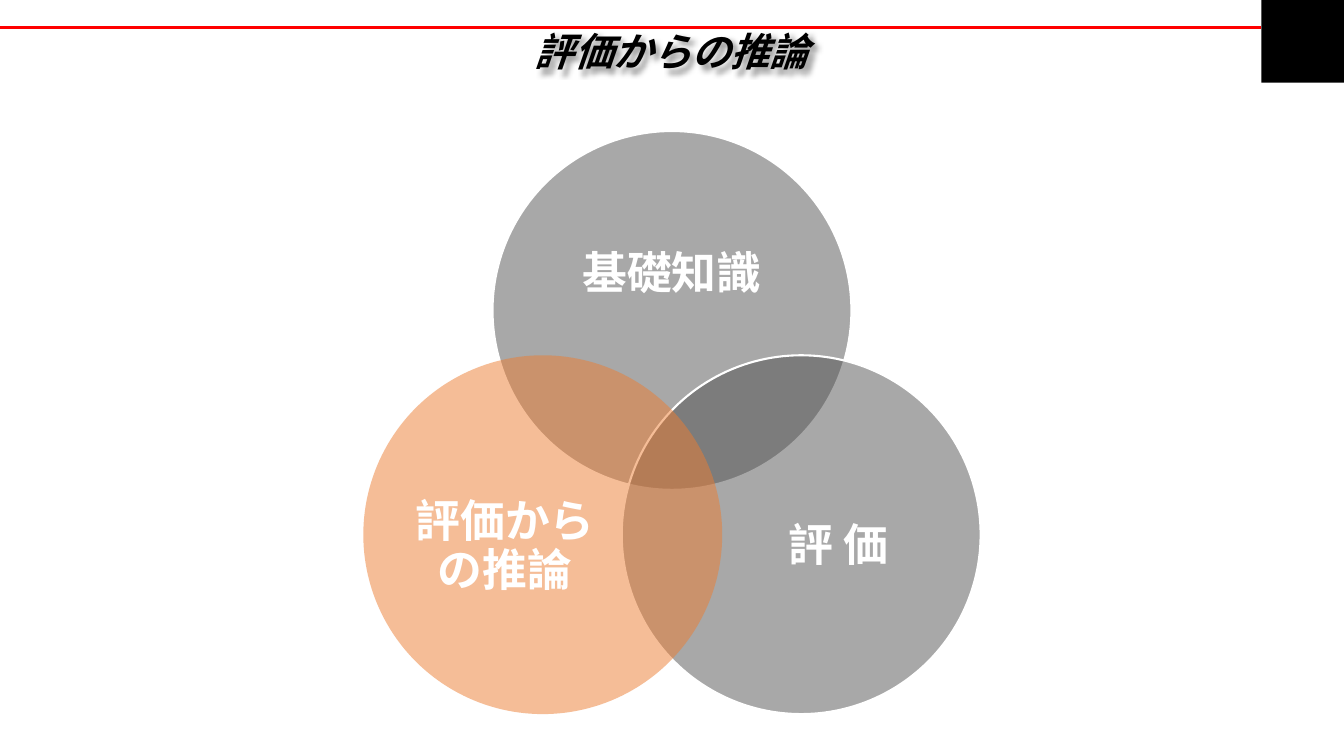
from dataclasses import dataclass

import pptx
import pptx.dml.color
import pptx.enum.shapes
import pptx.enum.text
import pptx.oxml
import pptx.oxml.ns
import pptx.shapes.autoshape
import pptx.slide
import pptx.util

Inches = pptx.util.Inches
Shape = pptx.shapes.autoshape.Shape
Slide = pptx.slide.Slide

WIDTH, HEIGHT = 13.33, 7.5
DIAMETER = 3.56
CENTRE_X, TOP_CENTRE_Y = WIDTH / 2, 3.08
BADGE_SIDE = 0.82
RULE_Y = 0.27


@dataclass(frozen=True)
class Theme:
    font: str = "Noto Sans CJK JP"
    ink: str = "000000"
    white: str = "FFFFFF"
    red: str = "FF0000"
    grey: str = "525252"
    orange: str = "ED7D31"
    title_size: float = 28
    label_size: float = 32
    rule_width: float = 2.25
    outline_width: float = 1.5


THEME = Theme()


@dataclass(frozen=True)
class Circle:
    """Offsets and label sizes are shares of the diameter."""
    label: str
    color: str
    outlined: bool
    offset: tuple[float, float]
    label_offset: tuple[float, float]
    label_size: tuple[float, float]


CIRCLES = (
    Circle("基礎知識", THEME.grey, True, (0, 0), (0, -0.1), (0.73, 0.45)),
    Circle("評 価", THEME.grey, True, (0.36, 0.625), (0.105, 0.035), (0.6, 0.55)),
    Circle("評価からの推論", THEME.orange, False, (-0.36, 0.625), (-0.105, 0.035), (0.6, 0.55)),
)


def rgb(color: str) -> pptx.dml.color.RGBColor:
    return pptx.dml.color.RGBColor.from_string(color)


def element(tag: str, attributes: str = "", children: str = ""):
    namespace = pptx.oxml.ns.nsdecls("a")
    return pptx.oxml.parse_xml(f"<a:{tag} {namespace} {attributes}>{children}</a:{tag}>")


def write(shape: Shape, text: str, size: float, color: str, italic: bool = False,
          spacing: float = 1.0) -> None:
    frame = shape.text_frame
    frame.text = text
    frame.word_wrap = True
    frame.auto_size = pptx.enum.text.MSO_AUTO_SIZE.NONE
    frame.vertical_anchor = pptx.enum.text.MSO_ANCHOR.MIDDLE
    frame.margin_left = frame.margin_right = frame.margin_top = frame.margin_bottom = 0
    para = frame.paragraphs[0]
    para.alignment = pptx.enum.text.PP_ALIGN.CENTER
    para.line_spacing = spacing
    font = para.font
    font.size, font.bold, font.italic = pptx.util.Pt(size), True, italic
    font.color.rgb = rgb(color)
    font.name = THEME.font
    defaults = para._p.pPr.find(pptx.oxml.ns.qn("a:defRPr"))
    defaults.append(element("ea", f'typeface="{THEME.font}"'))


def add_title(page: Slide) -> None:
    title = page.shapes.title
    title.left, title.top = 0, Inches(0.31)
    title.width, title.height = Inches(WIDTH), Inches(0.39)
    write(title, "評価からの推論", THEME.title_size, THEME.ink, italic=True)
    shadow = (f'<a:outerShdw blurRad="50800" dist="38100" dir="2700000">'
              f'<a:srgbClr val="{THEME.ink}"><a:alpha val="40000"/></a:srgbClr></a:outerShdw>')
    title._element.spPr.append(element("effectLst", children=shadow))


def add_header(page: Slide) -> None:
    """Red rule running into a plain corner square."""
    badge = page.shapes.add_shape(
        pptx.enum.shapes.MSO_SHAPE.RECTANGLE, Inches(WIDTH - BADGE_SIDE), 0,
        Inches(BADGE_SIDE), Inches(BADGE_SIDE))
    badge.shadow.inherit = False
    badge.fill.solid()
    badge.fill.fore_color.rgb = rgb(THEME.ink)
    badge.line.fill.background()
    rule = page.shapes.add_connector(
        pptx.enum.shapes.MSO_CONNECTOR.STRAIGHT, 0, Inches(RULE_Y),
        Inches(WIDTH - BADGE_SIDE), Inches(RULE_Y))
    rule.line.color.rgb = rgb(THEME.red)
    rule.line.width = pptx.util.Pt(THEME.rule_width)
    rule._element.spPr.append(element("effectLst"))


def add_circle(page: Slide, circle: Circle) -> None:
    x = CENTRE_X + circle.offset[0] * DIAMETER
    y = TOP_CENTRE_Y + circle.offset[1] * DIAMETER
    disc = page.shapes.add_shape(
        pptx.enum.shapes.MSO_SHAPE.OVAL, Inches(x - DIAMETER / 2), Inches(y - DIAMETER / 2),
        Inches(DIAMETER), Inches(DIAMETER))
    disc.shadow.inherit = False
    disc.fill.solid()
    disc.fill.fore_color.rgb = rgb(circle.color)
    fill = disc._element.spPr.find(pptx.oxml.ns.qn("a:solidFill"))
    fill[0].append(element("alpha", 'val="50000"'))
    if circle.outlined:
        disc.line.color.rgb = rgb(THEME.white)
        disc.line.width = pptx.util.Pt(THEME.outline_width)
    else:
        disc.line.fill.background()

    width, height = (share * DIAMETER for share in circle.label_size)
    box = page.shapes.add_textbox(
        Inches(x + circle.label_offset[0] * DIAMETER - width / 2),
        Inches(y + circle.label_offset[1] * DIAMETER - height / 2),
        Inches(width), Inches(height))
    write(box, circle.label, THEME.label_size, THEME.white, spacing=0.9)


def main() -> None:
    deck = pptx.Presentation()
    deck.slide_width, deck.slide_height = Inches(WIDTH), Inches(HEIGHT)
    page = deck.slides.add_slide(deck.slide_layouts.get_by_name("Title Only"))
    add_title(page)
    add_header(page)
    for circle in CIRCLES:
        add_circle(page, circle)
    deck.save("out.pptx")


if __name__ == "__main__":
    main()
